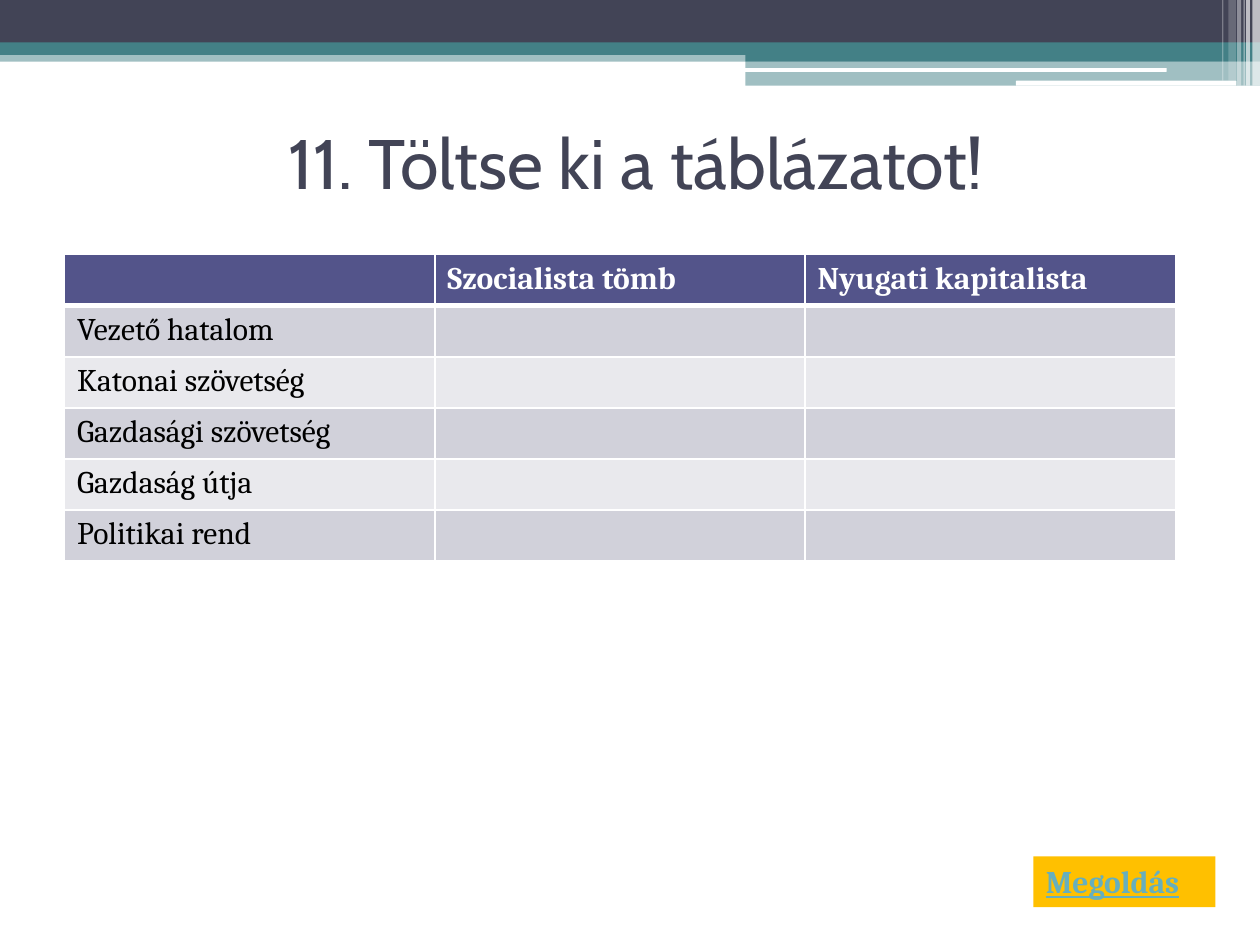
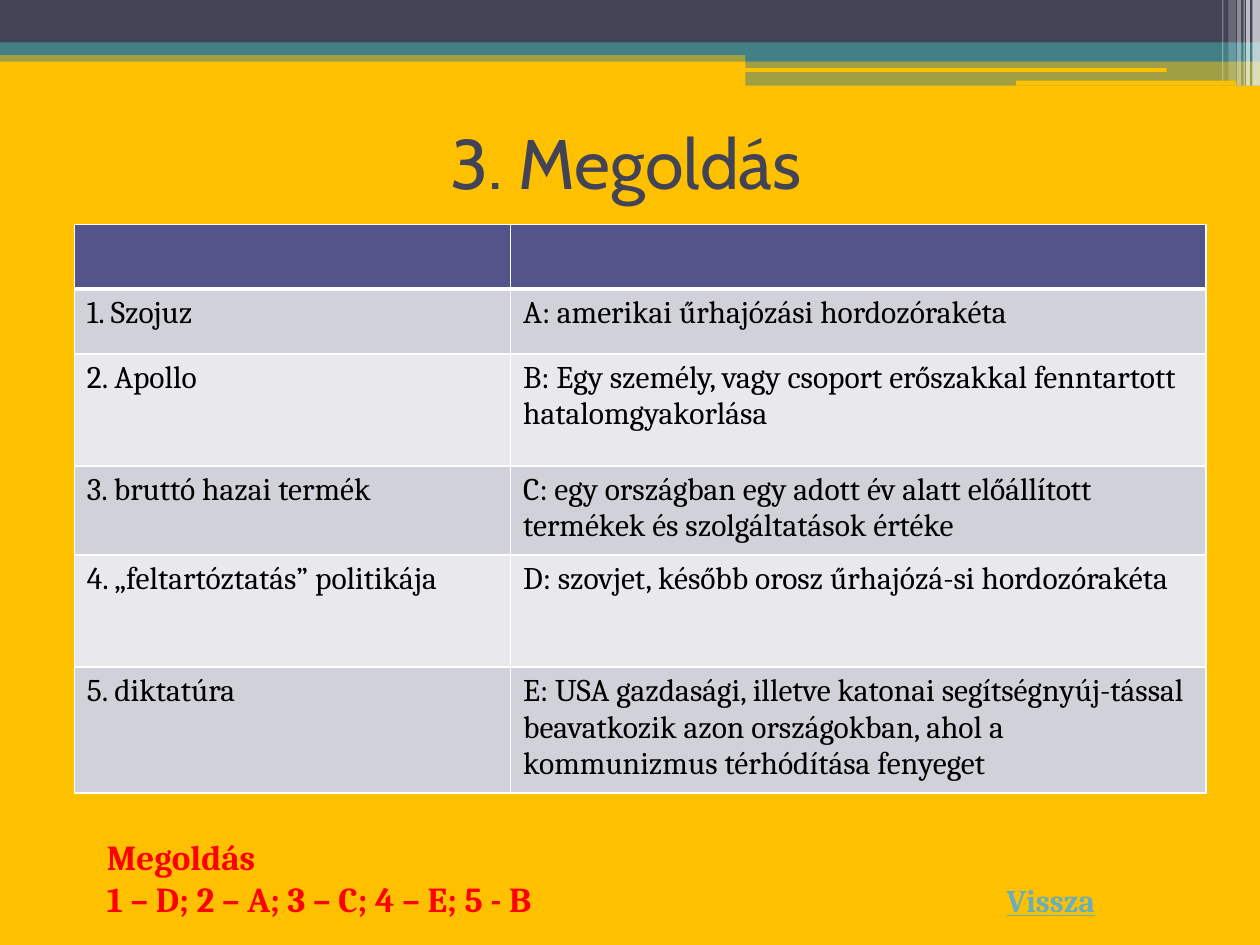
from lxml.etree import SubElement
from pptx import Presentation
from pptx.dml.color import RGBColor
from pptx.enum.shapes import MSO_SHAPE as Preset
from pptx.enum.text import MSO_ANCHOR as Anchor, PP_ALIGN as Align
from pptx.oxml import parse_xml
from pptx.oxml.ns import nsdecls, qn
from pptx.util import Pt

COLORS = {
    "white": "FFFFFF", "black": "000000", "gold": "FFC000", "red": "FF0000",
    "slate": "424456", "teal": "438086", "link": "67AFBD",
    "header": "53548A", "odd row": "D1D1DA", "even row": "E9E9ED",
}
TITLE = {"name": "Cabin", "size": Pt(40), "bold": False}
BODY = {"name": "Cambria", "size": Pt(18), "bold": False}
STRONG = {**BODY, "bold": True}
LINK = {**STRONG, "underline": True}
ANSWER = {**STRONG, "size": Pt(20)}

# left, top, width, height, colour, opacity in percent
BANDS = [
    (0, 28.8, 720, 6.5, "teal", 50),
    (0, 0, 720, 24.5, "slate", 100),
    (0, 24.2, 720, 7.2, "teal", 100),
    (426, 28.1, 294, 7.2, "teal", 100),
    (426, 35.3, 294, 13.7, "teal", 50),
]
# left, top, width, height, in the colour of the background
SLOTS = [(425.5, 38.9, 241.2, 2.2), (580.5, 46.1, 126, 2.9)]
# left, width, height, opacity in percent
STRIPES = [
    (715.7, 4.3, 49, 65), (712.1, 2.2, 49, 65), (710.6, 0.7, 49, 60),
    (707, 2.2, 49, 40), (702, 4.3, 46.1, 20), (698.4, 0.7, 46.1, 30),
]


def rgb(color):
    return RGBColor.from_string(COLORS[color])


class SlideBuilder:
    def __init__(self, presentation):
        self.presentation = presentation
        self.slide = None

    def start(self, background):
        layout = self.presentation.slide_layouts[5]
        self.slide = self.presentation.slides.add_slide(layout)
        fill = self.slide.background.fill
        fill.solid()
        fill.fore_color.rgb = rgb(background)
        for *box, color, opacity in BANDS:
            self.block(box, color, opacity)
        for box in SLOTS:
            self.block(box, background, preset=Preset.ROUNDED_RECTANGLE)
        for left, width, height, opacity in STRIPES:
            self.block((left, 0, width, height), "white", opacity)

    def block(self, box, color, opacity=100, preset=Preset.RECTANGLE):
        shape = self.slide.shapes.add_shape(preset, *map(Pt, box))
        shape.shadow.inherit = False
        shape.line.fill.background()
        shape.fill.solid()
        shape.fill.fore_color.rgb = rgb(color)
        if opacity < 100:
            fill_color = shape._element.spPr.find(".//" + qn("a:srgbClr"))
            SubElement(fill_color, qn("a:alpha"), val=str(opacity * 1000))
        return shape

    def set_text(self, frame, text, style, color, align=Align.LEFT):
        frame.text = text
        frame.word_wrap = True
        for paragraph in frame.paragraphs:
            paragraph.alignment = align
            font = paragraph.runs[0].font
            for name, value in style.items():
                setattr(font, name, value)
            font.color.rgb = rgb(color)

    def title(self, text, left):
        shape = self.slide.shapes.title
        box = {"left": left, "top": 50.4, "width": 648, "height": 84.2}
        for name, value in box.items():
            setattr(shape, name, Pt(value))
        self.set_text(shape.text_frame, text, TITLE, "slate", Align.CENTER)
        shape.text_frame.vertical_anchor = Anchor.MIDDLE

    def text(self, text, box, style, color):
        shape = self.slide.shapes.add_textbox(*map(Pt, box))
        self.set_text(shape.text_frame, text, style, color)

    def button(self, text, box):
        frame = self.block(box, "gold").text_frame
        self.set_text(frame, text, LINK, "link")
        frame.vertical_anchor = Anchor.TOP

    def borders(self, cell, top, bottom):
        """Draw white cell borders; top and bottom are widths in points."""
        widths = {"L": 1, "R": 1, "T": top, "B": bottom}
        for index, (side, width) in enumerate(widths.items()):
            line = parse_xml(
                f'<a:ln{side} {nsdecls("a")} w="{Pt(width)}"><a:solidFill>'
                f'<a:srgbClr val="{COLORS["white"]}"/></a:solidFill></a:ln{side}>')
            cell._tc.get_or_add_tcPr().insert(index, line)

    def table(self, rows, left, top, widths, heights):
        frame = self.slide.shapes.add_table(
            len(rows), len(widths), Pt(left), Pt(top),
            Pt(sum(widths)), Pt(sum(heights)))
        table = frame.table
        for column, width in zip(table.columns, widths):
            column.width = Pt(width)
        for row, height in zip(table.rows, heights):
            row.height = Pt(height)
        for index, texts in enumerate(rows):
            is_header = index == 0
            row_fill = "header" if is_header else ("even row", "odd row")[index % 2]
            style, color = (STRONG, "white") if is_header else (BODY, "black")
            for column, text in enumerate(texts):
                cell = table.cell(index, column)
                cell.fill.solid()
                cell.fill.fore_color.rgb = rgb(row_fill)
                self.borders(cell, 3 if index == 1 else 1, 3 if is_header else 1)
                if text:
                    self.set_text(cell.text_frame, text, style, color)


def build_task(builder):
    builder.start("white")
    builder.title("11. Töltse ki a táblázatot!", 39.6)
    topics = ["Vezető hatalom", "Katonai szövetség", "Gazdasági szövetség",
              "Gazdaság útja", "Politikai rend"]
    rows = [("", "Szocialista tömb", "Nyugati kapitalista")]
    rows += [(topic, "", "") for topic in topics]
    builder.table(rows, 36.9, 145.5, [211.6] * 3, [29.2] * len(rows))
    builder.button("Megoldás", (590.5, 489.3, 104, 29.1))


def build_solution(builder):
    builder.start("gold")
    builder.title("3. Megoldás", 33.8)
    rows = [
        ("", ""),
        ("1. Szojuz", "A: amerikai űrhajózási hordozórakéta"),
        ("2. Apollo", "B: Egy személy, vagy csoport erőszakkal fenntartott "
                      "hatalomgyakorlása"),
        ("3. bruttó hazai termék", "C: egy országban egy adott év alatt előállított "
                                   "termékek és szolgáltatások értéke"),
        ("4. „feltartóztatás” politikája",
         "D: szovjet, később orosz űrhajózá-si hordozórakéta"),
        ("5. diktatúra", "E: USA gazdasági, illetve katonai segítségnyúj-tással "
                         "beavatkozik azon országokban, ahol "
                         "a kommunizmus térhódítása fenyeget"),
    ]
    builder.table(rows, 42.5, 128.2, [249.3, 397.3], [37, 37, 64, 51, 64, 72])
    builder.text("Vissza", (568.1, 499.7, 74.2, 29.1), LINK, "link")
    builder.text("Megoldás\n1 – D; 2 – A; 3 – C; 4 – E; 5 - B",
                 (54, 473.8, 430.6, 55.7), ANSWER, "red")


def main():
    presentation = Presentation()
    presentation.slide_width = Pt(720)
    presentation.slide_height = Pt(540)
    builder = SlideBuilder(presentation)
    build_task(builder)
    build_solution(builder)
    presentation.save("out.pptx")


if __name__ == "__main__":
    main()
